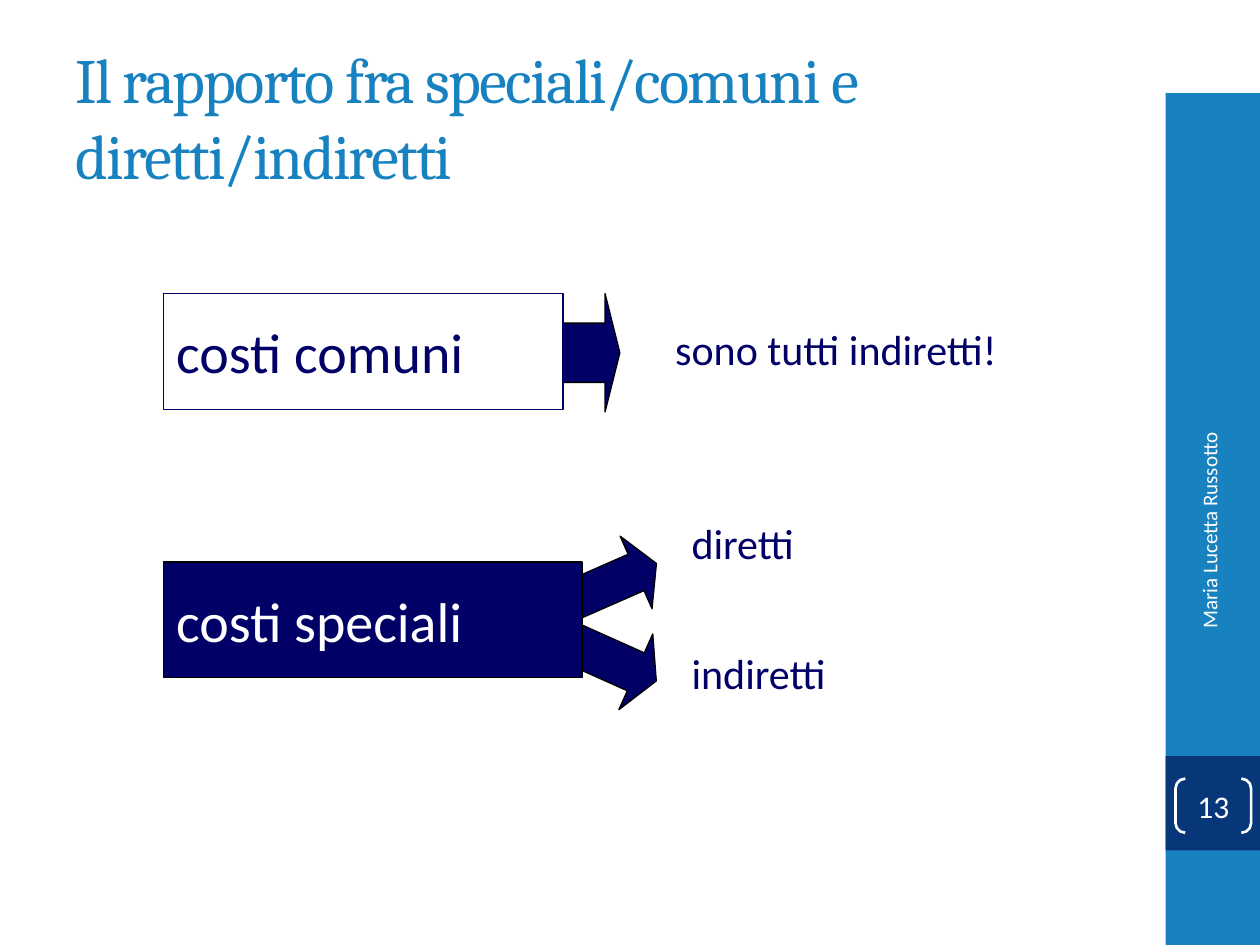
from pptx import Presentation
from pptx.dml.color import RGBColor
from pptx.enum.shapes import MSO_SHAPE
from pptx.enum.text import MSO_ANCHOR, MSO_AUTO_SIZE, PP_ALIGN
from pptx.util import Inches, Pt

NAVY, BLUE, DARK_BLUE = "000066", "1782BF", "073779"
WHITE, BLACK = "FFFFFF", "000000"


def color(value):
    return RGBColor.from_string(value)


def write(box, text, size, text_color, align=PP_ALIGN.LEFT, font="Calibri"):
    """Put one formatted paragraph into a shape."""
    para = box.text_frame.paragraphs[0]
    para.text = text
    para.alignment = align
    para.font.name = font
    para.font.size = Pt(size)
    para.font.color.rgb = color(text_color)
    return para


def add_shape(page, kind, place, fill=None, line=None, width=0.75):
    shape = page.shapes.add_shape(kind, *map(Inches, place))
    shape.shadow.inherit = False
    if fill:
        shape.fill.solid()
        shape.fill.fore_color.rgb = color(fill)
    else:
        shape.fill.background()
    if line:
        shape.line.color.rgb = color(line)
        shape.line.width = Pt(width)
    else:
        shape.line.fill.background()
    return shape


def add_arrow(page, place, head, rotation=0):
    arrow = add_shape(page, MSO_SHAPE.RIGHT_ARROW, place, NAVY, BLACK)
    arrow.adjustments[0] = 0.5
    arrow.adjustments[1] = head
    arrow.rotation = rotation


def add_cost_box(page, text, top, width, fill, line, text_color):
    box = add_shape(page, MSO_SHAPE.RECTANGLE, (1.3, top, width, 0.92), fill, line)
    box.text_frame.vertical_anchor = MSO_ANCHOR.MIDDLE
    write(box, text, 32, text_color)


def add_label(page, text, left, top, width):
    box = page.shapes.add_textbox(*map(Inches, (left, top, width, 0.51)))
    box.text_frame.word_wrap = False
    box.text_frame.auto_size = MSO_AUTO_SIZE.SHAPE_TO_FIT_TEXT
    write(box, text, 24, NAVY)


def add_title(page, text):
    title = page.shapes.title
    title.left, title.top, title.width, title.height = map(
        Inches, (0.5, 0.3, 8.33, 1.25))
    title.text_frame.auto_size = MSO_AUTO_SIZE.NONE
    title.text_frame.vertical_anchor = MSO_ANCHOR.MIDDLE
    para = write(title, text, 36, BLUE, font="Cambria")
    para.runs[0].font._element.set("spc", "-100")  # tighter letters


def add_side_band(page):
    add_shape(page, MSO_SHAPE.RECTANGLE, (9.25, 0.74, 0.75, 6.76), BLUE)
    add_shape(page, MSO_SHAPE.RECTANGLE, (9.25, 6, 0.75, 0.75), DARK_BLUE)

    # Author, reading upwards
    author = page.shapes.add_textbox(*map(Inches, (8.3, 4.43, 2.59, 0.4)))
    author.rotation = 270
    author.text_frame.word_wrap = True
    author.text_frame.vertical_anchor = MSO_ANCHOR.MIDDLE
    write(author, "Maria Lucetta Russotto", 12, WHITE, PP_ALIGN.RIGHT)

    # Page number in brackets
    number = add_shape(page, MSO_SHAPE.DOUBLE_BRACKET,
                       (9.33, 6.18, 0.6, 0.43), line=WHITE, width=1.5)
    number.adjustments[0] = 0.18
    frame = number.text_frame
    frame.margin_left = frame.margin_right = 0
    frame.margin_top = frame.margin_bottom = 0
    frame.vertical_anchor = MSO_ANCHOR.MIDDLE
    write(number, "13", 18, WHITE, PP_ALIGN.CENTER)


def main():
    deck = Presentation()
    deck.slide_width, deck.slide_height = Inches(10), Inches(7.5)
    page = deck.slides.add_slide(deck.slide_layouts[5])
    add_side_band(page)
    add_title(page, "Il rapporto fra speciali/comuni e diretti/indiretti")

    # Common costs: one outcome
    add_arrow(page, (4.45, 2.33, 0.47, 0.94), 0.25)
    add_label(page, "sono tutti indiretti!", 5.26, 2.52, 2.79)
    add_cost_box(page, "costi comuni", 2.33, 3.17, WHITE, NAVY, NAVY)

    # Special costs: two outcomes
    add_arrow(page, (4.53, 4.3, 0.71, 0.63), 0.28, 336.3)
    add_arrow(page, (4.53, 4.93, 0.71, 0.66), 0.27, 24.1)
    add_label(page, "diretti", 5.39, 4.06, 1.03)
    add_label(page, "indiretti", 5.39, 5.09, 1.28)
    add_cost_box(page, "costi speciali", 4.46, 3.32, NAVY, BLACK, WHITE)

    deck.save("out.pptx")


if __name__ == "__main__":
    main()
